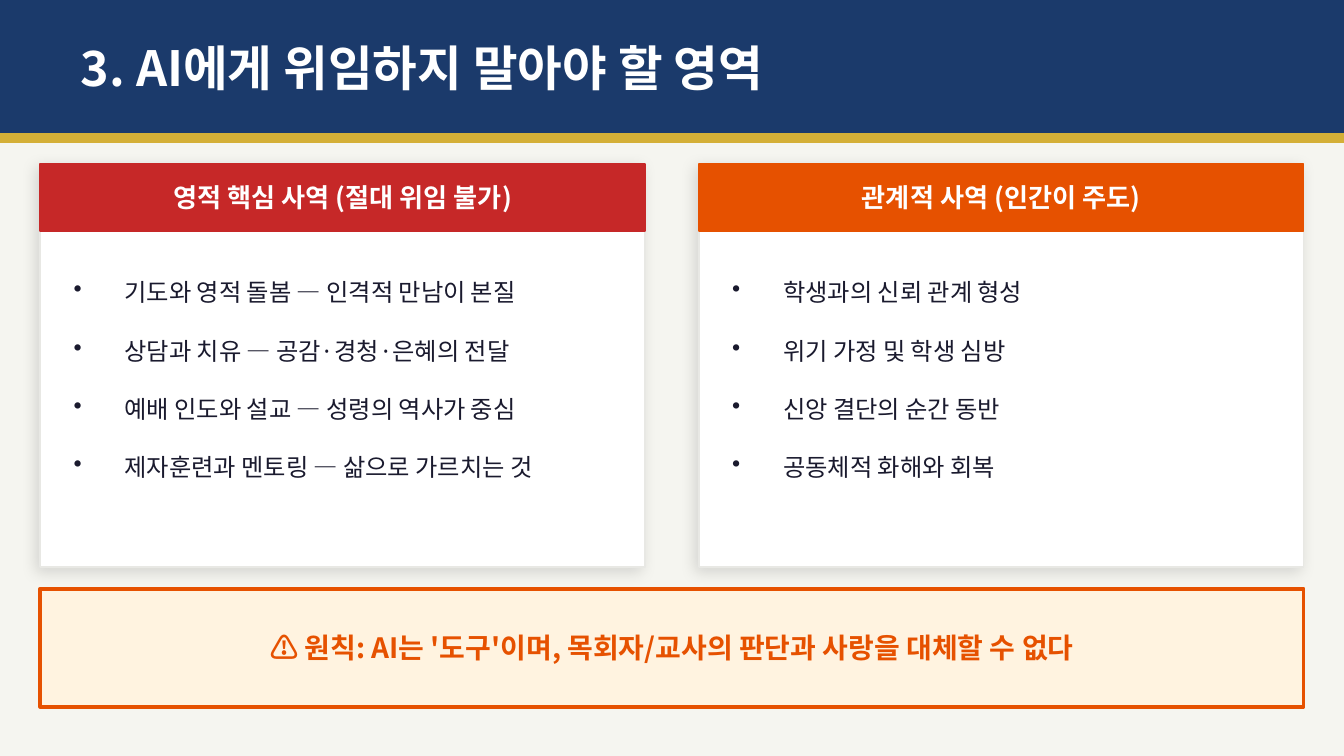
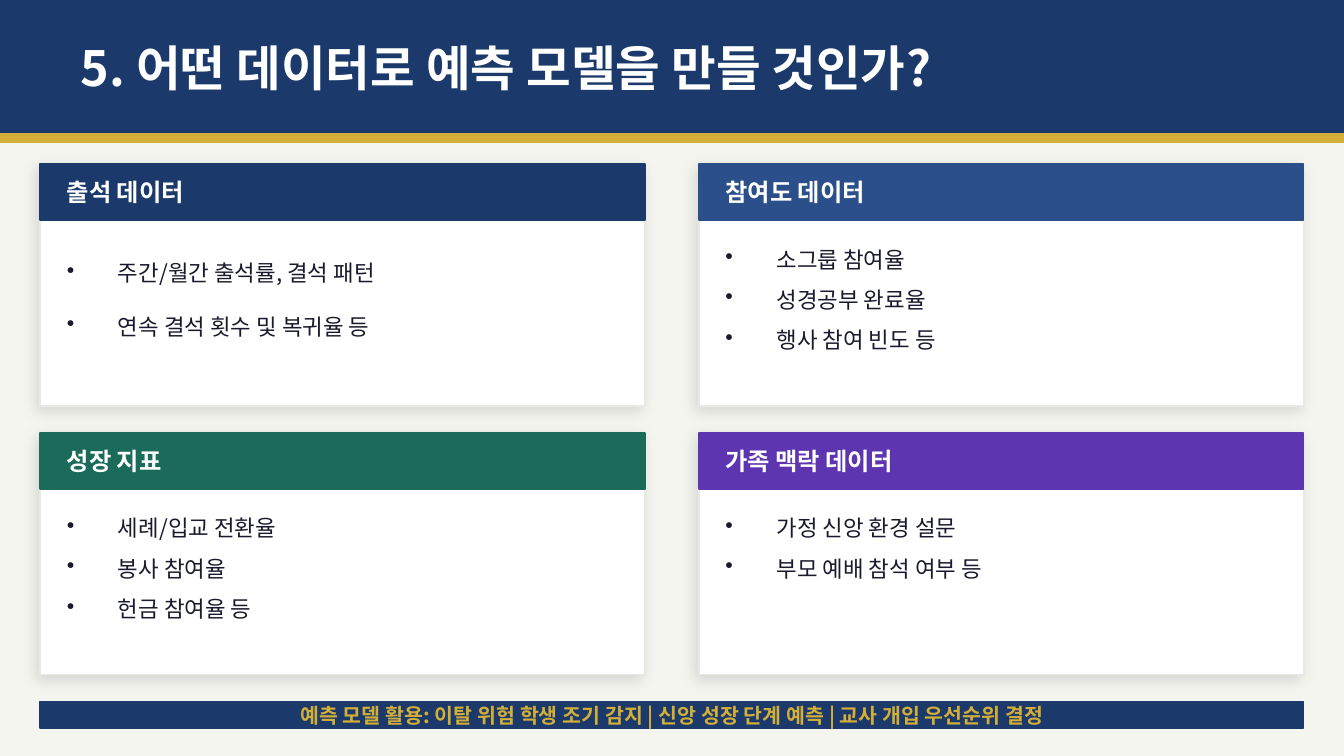
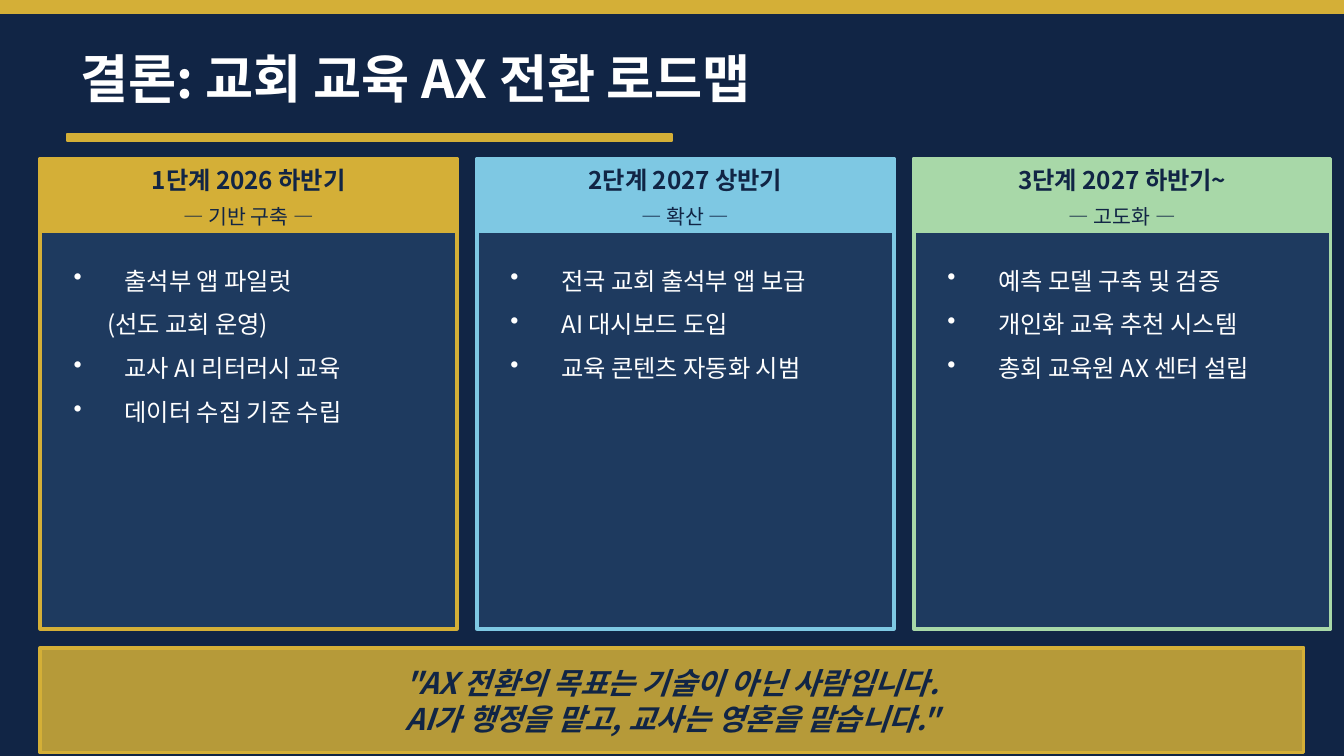
from dataclasses import dataclass, replace
from typing import NamedTuple, Optional, Sequence, Union

import pptx
import pptx.dml.color
import pptx.enum.shapes
import pptx.enum.text
import pptx.oxml
import pptx.oxml.ns
import pptx.util
from lxml import etree
from pptx.presentation import Presentation
from pptx.shapes.autoshape import Shape
from pptx.slide import Slide
from pptx.text.text import TextFrame

ALIGN = pptx.enum.text.PP_ALIGN
ANCHOR = pptx.enum.text.MSO_ANCHOR

# The grid has square cells: 100 columns across, 56.25 rows down.
CELL = pptx.util.Inches(0.1)
COLUMNS, ROWS = 100, 56.25
MARGIN = 3
CONTENT_WIDTH = COLUMNS - 2 * MARGIN

FONT = "Noto Sans CJK KR"
NAVY, MIDNIGHT, GOLD = "1B3A6B", "112545", "D4AF37"
IVORY, WHITE, INK, ORANGE = "F5F5F0", "FFFFFF", "1A1A2E", "E65100"
HANGING_INDENT = 3.8
CONTINUATION_INDENT = 2.5


class Box(NamedTuple):
    """A rectangle in grid columns and rows."""
    left: float
    top: float
    width: float
    height: float

    def inset(self, across: float, down: float) -> "Box":
        return Box(self.left + across, self.top + down,
                   self.width - 2 * across, self.height - 2 * down)

    def emu(self) -> list[int]:
        return [round(length * CELL) for length in self]


@dataclass(frozen=True)
class TextStyle:
    size: float
    color: str
    bold: bool = False
    italic: bool = False
    align: ALIGN = ALIGN.LEFT
    spacing: Optional[float] = None
    bulleted: bool = False


class Continuation(NamedTuple):
    """A list line that carries on the item above, without a bullet."""
    text: str


Line = Union[str, Continuation]


class Panel(NamedTuple):
    heading: str
    accent: str
    items: Sequence[Line]
    spacing: float
    subheading: str = ""


@dataclass(frozen=True)
class PanelStyle:
    """How a panel is laid out; insets are (columns, rows)."""
    header_rows: float
    heading: TextStyle
    heading_inset: tuple[float, float]
    items: TextStyle
    list_inset: float
    list_gap: float
    list_width: float
    list_rows: float
    fill: str = WHITE
    border: Optional[str] = "E8E8E4"
    border_width: float = 1
    shadowed: bool = True
    heading_rows: Optional[float] = None
    subheading: Optional[TextStyle] = None


TITLE = TextStyle(26, WHITE, bold=True)
DUTY_STYLE = PanelStyle(
    header_rows=5,
    heading=TextStyle(14, WHITE, bold=True, align=ALIGN.CENTER),
    heading_inset=(1, 0.1),
    items=TextStyle(13, INK, bulleted=True),
    list_inset=1.5, list_gap=0.8, list_width=43, list_rows=23)
DATA_STYLE = PanelStyle(
    header_rows=4.2,
    heading=TextStyle(13, WHITE, bold=True),
    heading_inset=(1, 0.2),
    items=TextStyle(12, INK, bulleted=True),
    list_inset=1, list_gap=0.4, list_width=43, list_rows=12.8)
PHASE_STYLE = PanelStyle(
    header_rows=5.5,
    heading=TextStyle(13, MIDNIGHT, bold=True, align=ALIGN.CENTER),
    heading_inset=(0.5, 0.1),
    items=TextStyle(13, WHITE, bulleted=True),
    list_inset=1.5, list_gap=0.9, list_width=28, list_rows=27,
    fill="1E3A5F", border=None, border_width=2, shadowed=False,
    heading_rows=3,
    subheading=TextStyle(11, MIDNIGHT, align=ALIGN.CENTER))

DUTIES = [
    Panel("영적 핵심 사역 (절대 위임 불가)", "C62828", [
        "기도와 영적 돌봄 — 인격적 만남이 본질",
        "상담과 치유 — 공감·경청·은혜의 전달",
        "예배 인도와 설교 — 성령의 역사가 중심",
        "제자훈련과 멘토링 — 삶으로 가르치는 것"], 2),
    Panel("관계적 사역 (인간이 주도)", ORANGE, [
        "학생과의 신뢰 관계 형성",
        "위기 가정 및 학생 심방",
        "신앙 결단의 순간 동반",
        "공동체적 화해와 회복"], 2),
]
DATA_SOURCES = [
    Panel("출석 데이터", NAVY,
          ["주간/월간 출석률, 결석 패턴", "연속 결석 횟수 및 복귀율 등"], 2),
    Panel("참여도 데이터", "2A4F8A",
          ["소그룹 참여율", "성경공부 완료율", "행사 참여 빈도 등"], 1.5),
    Panel("성장 지표", "1A6B5A",
          ["세례/입교 전환율", "봉사 참여율", "헌금 참여율 등"], 1.5),
    Panel("가족 맥락 데이터", "5E35B1",
          ["가정 신앙 환경 설문", "부모 예배 참석 여부 등"], 1.5),
]
PHASES = [
    Panel("1단계 2026 하반기", GOLD, [
        "출석부 앱 파일럿",
        Continuation("(선도 교회 운영)"),
        "교사 AI 리터러시 교육",
        "데이터 수집 기준 수립"], 1.5, "— 기반 구축 —"),
    Panel("2단계 2027 상반기", "7EC8E3", [
        "전국 교회 출석부 앱 보급",
        "AI 대시보드 도입",
        "교육 콘텐츠 자동화 시범"], 1.5, "— 확산 —"),
    Panel("3단계 2027 하반기~", "A8D8A8", [
        "예측 모델 구축 및 검증",
        "개인화 교육 추천 시스템",
        "총회 교육원 AX 센터 설립"], 1.5, "— 고도화 —"),
]


def rgb(value: str) -> pptx.dml.color.RGBColor:
    return pptx.dml.color.RGBColor.from_string(value)


def add_block(slide: Slide, box: Box, fill: str, border: Optional[str] = None,
              border_width: float = 1) -> Shape:
    block = slide.shapes.add_shape(
        pptx.enum.shapes.MSO_SHAPE.RECTANGLE, *box.emu())
    block.shadow.inherit = False
    block.fill.solid()
    block.fill.fore_color.rgb = rgb(fill)
    block.line.color.rgb = rgb(border or fill)
    block.line.width = pptx.util.Pt(border_width)
    return block


def cast_shadow(block: Shape) -> None:
    effects = block._element.spPr.find(pptx.oxml.ns.qn("a:effectLst"))
    effects.append(pptx.oxml.parse_xml(
        f'<a:outerShdw {pptx.oxml.ns.nsdecls("a")} blurRad="{pptx.util.Pt(8)}" '
        f'dist="{pptx.util.Pt(3)}" dir="8100000" algn="bl" rotWithShape="0">'
        '<a:srgbClr val="000000"><a:alpha val="12000"/></a:srgbClr>'
        '</a:outerShdw>'))


def make_translucent(block: Shape, opacity: int) -> None:
    tint = block._element.spPr.find(
        f'{pptx.oxml.ns.qn("a:solidFill")}/{pptx.oxml.ns.qn("a:srgbClr")}')
    etree.SubElement(tint, pptx.oxml.ns.qn("a:alpha"), val=str(opacity * 1000))


def fill_text(frame: TextFrame, lines: Sequence[Line], style: TextStyle,
              anchor: ANCHOR) -> None:
    frame.word_wrap = True
    frame.auto_size = pptx.enum.text.MSO_AUTO_SIZE.NONE
    frame.vertical_anchor = anchor
    for index, line in enumerate(lines):
        paragraph = frame.paragraphs[0] if index == 0 else frame.add_paragraph()
        continued = isinstance(line, Continuation)
        paragraph.text = line.text if continued else line
        paragraph.alignment = style.align
        if style.spacing:
            paragraph.line_spacing = style.spacing
        properties = paragraph._p.get_or_add_pPr()
        if continued:
            properties.set("marL", str(round(CONTINUATION_INDENT * CELL)))
        elif style.bulleted:
            indent = round(HANGING_INDENT * CELL)
            properties.set("marL", str(indent))
            properties.set("indent", str(-indent))
            etree.SubElement(properties, pptx.oxml.ns.qn("a:buChar"), char="•")
        font = paragraph.font
        font.size = pptx.util.Pt(style.size)
        font.bold = style.bold
        font.italic = style.italic
        font.color.rgb = rgb(style.color)
        font.name = FONT
        etree.SubElement(font._element, pptx.oxml.ns.qn("a:ea"), typeface=FONT)


def add_text(slide: Slide, box: Box, lines: Sequence[Line], style: TextStyle,
             anchor: ANCHOR = ANCHOR.MIDDLE) -> None:
    fill_text(slide.shapes.add_textbox(*box.emu()).text_frame,
              lines, style, anchor)


def add_panel(slide: Slide, box: Box, panel: Panel, style: PanelStyle) -> None:
    body = add_block(slide, box, style.fill, style.border or panel.accent,
                     style.border_width)
    if style.shadowed:
        cast_shadow(body)
    header = box._replace(height=style.header_rows)
    add_block(slide, header, panel.accent)

    heading = header.inset(*style.heading_inset)
    if style.heading_rows:
        heading = heading._replace(height=style.heading_rows)
    add_text(slide, heading, [panel.heading], style.heading)
    if style.subheading:
        below = heading.top + heading.height
        add_text(slide, heading._replace(
            top=below, height=header.top + header.height - below),
            [panel.subheading], style.subheading)

    items = Box(box.left + style.list_inset,
                header.top + header.height + style.list_gap,
                style.list_width, style.list_rows)
    add_text(slide, items, panel.items,
             replace(style.items, spacing=panel.spacing), ANCHOR.TOP)


def add_panel_grid(slide: Slide, panels: Sequence[Panel], style: PanelStyle,
                   first: Box, per_row: int, gap: float) -> None:
    """Lay panels out row by row, starting from the box of the first."""
    for index, panel in enumerate(panels):
        row, column = divmod(index, per_row)
        box = first._replace(left=first.left + column * (first.width + gap),
                             top=first.top + row * (first.height + 2))
        add_panel(slide, box, panel, style)


def start_slide(deck: Presentation, background: str) -> Slide:
    slide = deck.slides.add_slide(deck.slide_layouts.get_by_name("Title Only"))
    slide.background.fill.solid()
    slide.background.fill.fore_color.rgb = rgb(background)
    return slide


def place_title(slide: Slide, text: str, box: Box, style: TextStyle) -> None:
    """Format the title placeholder and bring it in front of the bands."""
    title = slide.shapes.title
    title.left, title.top, title.width, title.height = box.emu()
    fill_text(title.text_frame, [text], style, ANCHOR.MIDDLE)
    slide.shapes._spTree.append(title._element)


def start_banded_slide(deck: Presentation, title: str) -> Slide:
    slide = start_slide(deck, IVORY)
    add_block(slide, Box(0, 0, COLUMNS, 10), NAVY)
    add_block(slide, Box(0, 10, COLUMNS, 0.6), GOLD)
    place_title(slide, title, Box(5, 0.8, 85, 8.4), TITLE)
    return slide


def build_delegation_limits(deck: Presentation) -> None:
    slide = start_banded_slide(deck, "3. AI에게 위임하지 말아야 할 영역")
    add_panel_grid(slide, DUTIES, DUTY_STYLE, Box(MARGIN, 12.2, 45, 30), 2, 4)
    principle = Box(MARGIN, 43.8, CONTENT_WIDTH, 8.8)
    add_block(slide, principle, "FFF3E0", ORANGE, 2)
    add_text(slide, principle.inset(2, 0.4),
             ["⚠ 원칙: AI는 '도구'이며, 목회자/교사의 판단과 사랑을 대체할 수 없다"],
             TextStyle(15, ORANGE, bold=True, align=ALIGN.CENTER))


def build_prediction_data(deck: Presentation) -> None:
    slide = start_banded_slide(deck, "5. 어떤 데이터로 예측 모델을 만들 것인가?")
    add_panel_grid(slide, DATA_SOURCES, DATA_STYLE,
                   Box(MARGIN, 12.2, 45, 18), 2, 4)
    uses = Box(MARGIN, 52.2, CONTENT_WIDTH, 2)
    add_block(slide, uses, NAVY)
    add_text(slide, uses.inset(1, 0),
             ["예측 모델 활용: 이탈 위험 학생 조기 감지 | 신앙 성장 단계 예측 | "
              "교사 개입 우선순위 결정"],
             TextStyle(11, GOLD, bold=True, align=ALIGN.CENTER))


def build_roadmap(deck: Presentation) -> None:
    slide = start_slide(deck, MIDNIGHT)
    add_block(slide, Box(0, 0, COLUMNS, 1), GOLD)
    place_title(slide, "결론: 교회 교육 AX 전환 로드맵", Box(5, 2, 90, 7.5),
                replace(TITLE, size=28))
    add_block(slide, Box(5, 10, 45, 0.5), GOLD)
    add_panel_grid(slide, PHASES, PHASE_STYLE,
                   Box(MARGIN, 11.8, 31, 35), 3, 1.5)
    closing = Box(MARGIN, 48.2, CONTENT_WIDTH, 7.8)
    make_translucent(add_block(slide, closing, GOLD, border_width=2), 85)
    add_text(slide, closing.inset(2, 0.3),
             ['"AX 전환의 목표는 기술이 아닌 사람입니다.',
              'AI가 행정을 맡고, 교사는 영혼을 맡습니다."'],
             TextStyle(16, MIDNIGHT, bold=True, italic=True,
                       align=ALIGN.CENTER))


def main() -> None:
    deck = pptx.Presentation()
    deck.slide_width = round(COLUMNS * CELL)
    deck.slide_height = round(ROWS * CELL)
    build_delegation_limits(deck)
    build_prediction_data(deck)
    build_roadmap(deck)
    deck.save("out.pptx")


if __name__ == "__main__":
    main()
